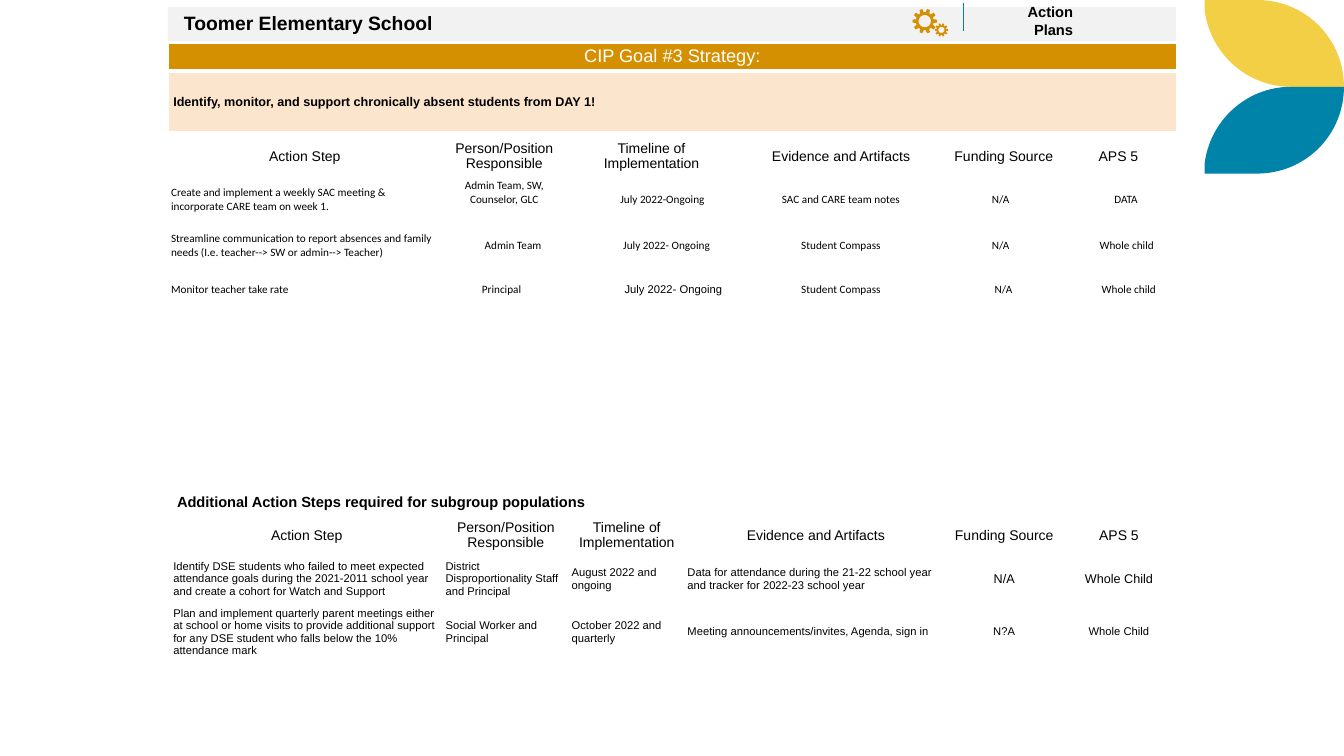
import math
from dataclasses import dataclass

from lxml import etree
from pptx import Presentation
from pptx.dml.color import RGBColor
from pptx.enum.shapes import MSO_CONNECTOR, MSO_SHAPE
from pptx.enum.text import MSO_ANCHOR, PP_ALIGN
from pptx.oxml.ns import qn
from pptx.util import Pt

LEFT, CENTER, RIGHT = PP_ALIGN.LEFT, PP_ALIGN.CENTER, PP_ALIGN.RIGHT
TOP, MIDDLE = MSO_ANCHOR.TOP, MSO_ANCHOR.MIDDLE
RECTANGLE, STRAIGHT = MSO_SHAPE.RECTANGLE, MSO_CONNECTOR.STRAIGHT


@dataclass(frozen=True)
class Theme:
    yellow: str = "F3CF45"
    blue: str = "0083A9"
    gold: str = "D59002"
    peach: str = "FCE5CD"
    grey: str = "F2F2F2"
    black: str = "000000"
    white: str = "FFFFFF"
    sans: str = "Arial"
    humanist: str = "Calibri"
    school: float = 13.8
    goal: float = 13
    label: float = 10.5
    header: float = 10
    strategy: float = 9
    body: float = 8


THEME = Theme()


@dataclass(frozen=True)
class Entry:
    text: str
    align: PP_ALIGN = LEFT
    indent: float = 2
    font: str = THEME.sans
    size: float = THEME.body
    color: str = THEME.black
    bold: bool = False
    bottom: float = 2


@dataclass(frozen=True)
class Grid:
    left: float
    top: float
    columns: list[float]
    heights: list[float]
    rows: list[list[Entry]]


@dataclass(frozen=True)
class Gear:
    x: float
    y: float
    tip: float
    root: float
    hole: float


def note(text: str, indent: float = 2, align: PP_ALIGN = LEFT, bottom: float = 2) -> Entry:
    return Entry(text, align, indent, THEME.humanist, bottom=bottom)


def centred(text: str, size: float = THEME.body) -> Entry:
    return Entry(text, CENTER, size=size)


HEADERS = [Entry(title, CENTER, 5, size=THEME.header) for title in (
    "Action Step", "Person/Position Responsible", "Timeline of Implementation",
    "Evidence and Artifacts", "Funding Source", "APS 5")]

ACTIONS = Grid(120.2, 97.2, [195, 90, 120.3, 150.5, 82, 82], [28.8, 33.5, 31.7, 31.7, 31.7, 31.7], [
    HEADERS,
    [note("Create and implement a weekly SAC meeting & incorporate CARE team on week 1."),
     note("Admin Team, SW, Counselor, GLC", align=CENTER, bottom=12),
     note("July 2022-Ongoing", 38), note("SAC and CARE team notes", align=CENTER),
     note("N/A", 32.5), note("DATA", 38)],
    [note("Streamline communication to report absences and family needs "
          "(I.e. teacher--> SW or admin--> Teacher)"),
     note("Admin Team", 31), note("July 2022- Ongoing", 40),
     note("Student Compass", align=CENTER), note("N/A", 32.5), note("Whole child", 27.5)],
    [note("Monitor teacher take rate"), note("Principal", 29), Entry("July 2022- Ongoing", indent=41),
     note("Student Compass", align=CENTER), note("N/A", 34.5), note("Whole child", 29)],
])

SUBGROUPS = Grid(121.8, 368, [194.5, 90, 82.8, 187.2, 82, 82], [28.8, 33.5, 42, 18.7], [
    HEADERS,
    [Entry("Identify DSE students who failed to meet expected attendance goals during the "
           "2021-2011 school year and create a cohort for Watch and Support"),
     Entry("District Disproportionality Staff and Principal"), Entry("August 2022 and ongoing"),
     Entry("Data for attendance during the 21-22 school year and tracker for 2022-23 school year"),
     centred("N/A", 9), centred("Whole Child", 9)],
    [Entry("Plan and implement quarterly parent meetings either at school or home visits to provide "
           "additional support for any DSE student who falls below the 10% attendance mark"),
     Entry("Social Worker and Principal"), Entry("October 2022 and quarterly"),
     Entry("Meeting announcements/invites, Agenda, sign in"), centred("N?A"), centred("Whole Child")],
])

GEARS = [Gear(660.6, 15.1, 8.8, 6.4, 4.4), Gear(672.5, 21.4, 4.8, 3.5, 2.2)]


def rgb(color: str) -> RGBColor:
    return RGBColor.from_string(color)


def write(frame, entry: Entry) -> None:
    frame.text = entry.text
    para = frame.paragraphs[0]
    para.alignment = entry.align
    for span in para.runs:
        span.font.name, span.font.size = entry.font, Pt(entry.size)
        span.font.bold, span.font.color.rgb = entry.bold, rgb(entry.color)


def fill_cell(cell, entry: Entry, anchor: MSO_ANCHOR = MIDDLE) -> None:
    write(cell.text_frame, entry)
    cell.vertical_anchor = anchor
    cell.margin_left = Pt(entry.indent)
    cell.margin_right = Pt(entry.indent if entry.align == CENTER else 2)
    cell.margin_top, cell.margin_bottom = Pt(2), Pt(entry.bottom)


def add_plain_table(page, left: float, top: float, columns: list[float], heights: list[float]):
    table = page.shapes.add_table(len(heights), len(columns), Pt(left), Pt(top),
                                  Pt(sum(columns)), Pt(sum(heights))).table
    table.first_row = table.horz_banding = False
    for column, width in zip(table.columns, columns):
        column.width = Pt(width)
    for row, height in zip(table.rows, heights):
        row.height = Pt(height)
    for cell in table.iter_cells():
        cell.fill.background()
    return table


def draw_grid(page, grid: Grid) -> None:
    table = add_plain_table(page, grid.left, grid.top, grid.columns, grid.heights)
    for r, entries in enumerate(grid.rows):
        for c, entry in enumerate(entries):
            fill_cell(table.cell(r, c), entry)


def set_borders(cell, widths: dict[str, float]) -> None:
    properties = cell._tc.get_or_add_tcPr()
    for place, (side, width) in enumerate(widths.items()):
        line = etree.Element(qn(f"a:{side}"), w=str(Pt(width)))
        fill = etree.SubElement(line, qn("a:solidFill"))
        etree.SubElement(fill, qn("a:srgbClr"), val=THEME.white)
        properties.insert(place, line)


def draw_goal(page) -> None:
    table = add_plain_table(page, 120.2, 31, [240] * 3, [19.4, 44])
    bands = [
        (Entry("CIP Goal #3 Strategy:", CENTER, 3.6, size=THEME.goal, color=THEME.white), THEME.gold, TOP, 1),
        (Entry("Identify, monitor, and support chronically absent students from DAY 1!",
               indent=3.6, size=THEME.strategy, bold=True), THEME.peach, MIDDLE, 3),
    ]
    for r, (entry, color, anchor, upper) in enumerate(bands):
        table.cell(r, 0).merge(table.cell(r, 2))
        fill_cell(table.cell(r, 0), entry, anchor)
        for c in range(3):
            cell = table.cell(r, c)
            cell.fill.solid()
            cell.fill.fore_color.rgb = rgb(color)
            set_borders(cell, {"lnL": 1, "lnR": 1, "lnT": upper, "lnB": 3})


def paint(shape, color: str) -> None:
    shape.shadow.inherit = False
    shape.fill.solid()
    shape.fill.fore_color.rgb = rgb(color)
    shape.line.fill.background()


def draw_outline(page, contours: list[list[tuple[float, float]]], color: str) -> None:
    paths = [[(Pt(x), Pt(y)) for x, y in contour] for contour in contours]
    builder = page.shapes.build_freeform(*paths[0][0], scale=1.0)
    builder.add_line_segments(paths[0][1:], close=True)
    for path in paths[1:]:
        builder.move_to(*path[0])
        builder.add_line_segments(path[1:], close=True)
    paint(builder.convert_to_shape(), color)


def curve(a, b, c, d, steps: int = 32) -> list[tuple[float, float]]:
    points = []
    for t in (i / steps for i in range(steps + 1)):
        weights = ((1 - t) ** 3, 3 * t * (1 - t) ** 2, 3 * t * t * (1 - t), t ** 3)
        points.append(tuple(sum(w * p[k] for w, p in zip(weights, (a, b, c, d))) for k in (0, 1)))
    return points


def draw_leaf(page, color: str, base: float, direction: int) -> None:
    leaf = [(0, 0), *curve((37.5, 0), (72, 0), (99.6, 27.5), (99.6, 62)),
            *curve((62, 62), (29.5, 62), (3.6, 37.5), (0, 6.5))]
    draw_outline(page, [[(860.4 + x, base + direction * y) for x, y in leaf]], color)


def draw_gear(page, gear: Gear) -> None:
    def at(radius: float, degrees: float) -> tuple[float, float]:
        angle = math.radians(degrees)
        return gear.x + radius * math.sin(angle), gear.y - radius * math.cos(angle)

    corners = [(gear.root, 6), (gear.tip, 11), (gear.tip, 25), (gear.root, 30)]
    rim = [at(radius, 36 * tooth + turn) for tooth in range(10) for radius, turn in corners]
    draw_outline(page, [rim, [at(gear.hole, -10 * i) for i in range(36)]], THEME.gold)


def add_label(page, entry: Entry, left: float, top: float, width: float, height: float,
              anchor: MSO_ANCHOR = MIDDLE, upper: float = 5) -> None:
    box = page.shapes.add_textbox(Pt(left), Pt(top), Pt(width), Pt(height))
    frame = box.text_frame
    frame.word_wrap, frame.vertical_anchor = True, anchor
    frame.margin_left = frame.margin_right = Pt(entry.indent)
    frame.margin_top = frame.margin_bottom = Pt(upper)
    write(frame, entry)


def main() -> None:
    deck = Presentation()
    deck.slide_width, deck.slide_height = Pt(960), Pt(540)
    page = deck.slides.add_slide(deck.slide_layouts[6])

    # Corner leaves
    draw_leaf(page, THEME.yellow, 0, 1)
    draw_leaf(page, THEME.blue, 124, -1)

    # Heading strip with divider and gears
    paint(page.shapes.add_shape(RECTANGLE, Pt(120), Pt(5), Pt(720), Pt(24.5)), THEME.grey)
    divider = page.shapes.add_connector(STRAIGHT, Pt(688.3), Pt(2.5), Pt(688.3), Pt(21.8))
    divider.line.color.rgb, divider.line.width = rgb(THEME.blue), Pt(0.75)
    etree.SubElement(divider._element.spPr, qn("a:effectLst"))
    add_label(page, Entry("Action Plans", RIGHT, 5, size=THEME.label, bold=True), 700, 0.7, 71.5, 28)
    add_label(page, Entry("Toomer Elementary School", indent=5, size=THEME.school, bold=True),
              126.4, 2.4, 273.6, 27.4)
    for gear in GEARS:
        draw_gear(page, gear)

    # Goal and action tables
    draw_grid(page, ACTIONS)
    add_label(page, Entry("Additional Action Steps required for subgroup populations", indent=6.5,
                          size=THEME.label, bold=True), 120, 349, 720, 19.4, TOP, 3.2)
    draw_grid(page, SUBGROUPS)
    draw_goal(page)

    deck.save("out.pptx")


if __name__ == "__main__":
    main()
